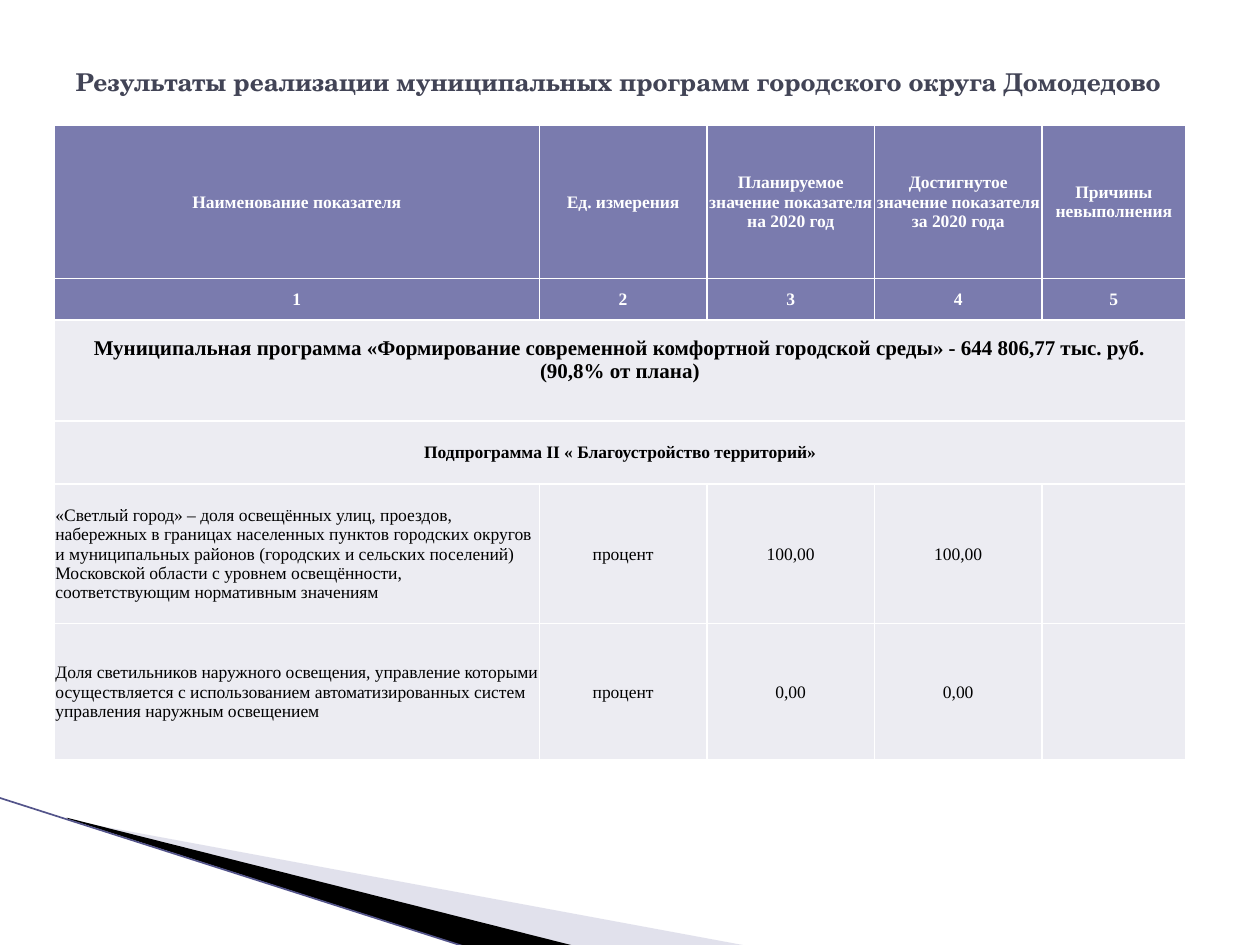
from typing import Any, NamedTuple

from lxml.etree import SubElement
from pptx import Presentation
from pptx.dml.color import RGBColor
from pptx.enum.shapes import MSO_CONNECTOR
from pptx.enum.text import MSO_ANCHOR, PP_ALIGN
from pptx.oxml import parse_xml
from pptx.oxml.ns import nsdecls, qn
from pptx.util import Pt

PX = 9144
HEADER_FILL = "7A7BAE"
BODY_FILL = "ECECF2"
CELL_FORMAT = {"margin_left": PX, "margin_right": PX, "margin_top": PX,
               "margin_bottom": 0, "vertical_anchor": MSO_ANCHOR.MIDDLE}


class Wedge(NamedTuple):
    points: list[tuple[int, int]]
    fill: str
    opacity: int = 100


class Row(NamedTuple):
    height: int
    texts: list[str]
    fill: str = BODY_FILL
    color: str = "000000"
    bold: bool = False
    size: int = 10
    first_align: PP_ALIGN = PP_ALIGN.CENTER
    bottom_margin: int = 0


WEDGES = [
    Wedge([(55, 651), (595, 751), (456, 751), (55, 650)], "B6B6D1", 40),
    Wedge([(53, 649), (457, 751), (372, 752), (54, 650)], "000000"),
]
COLUMN_WIDTHS = [385, 133, 133, 133, 114]
ROWS = [
    Row(122, ["Наименование показателя", "Ед. измерения",
              "Планируемое значение показателя на 2020 год",
              "Достигнутое значение показателя за 2020 года",
              "Причины невыполнения"], HEADER_FILL, "FFFFFF", True),
    Row(33, ["1", "2", "3", "4", "5"], HEADER_FILL, "FFFFFF", True),
    Row(80, ["Муниципальная программа «Формирование современной комфортной "
             "городской среды» - 644 806,77 тыс. руб.\v(90,8% от плана)"],
        bold=True, size=12, bottom_margin=18),
    Row(50, ["Подпрограмма II « Благоустройство территорий»"], bold=True),
    Row(111, ["«Светлый город» – доля освещённых улиц, проездов, набережных в границах "
              "населенных пунктов городских округов и муниципальных районов (городских и "
              "сельских поселений) Московской области с уровнем освещённости, "
              "соответствующим нормативным значениям",
              "процент", "100,00", "100,00", ""], first_align=PP_ALIGN.LEFT),
    Row(108, ["Доля светильников наружного освещения, управление которыми "
              "осуществляется с использованием автоматизированных систем управления "
              "наружным освещением",
              "процент", "0,00", "0,00", ""], first_align=PP_ALIGN.LEFT),
]


def rgb(value: str) -> RGBColor:
    return RGBColor.from_string(value)


def apply_format(target: Any, values: dict[str, Any]) -> None:
    for name, value in values.items():
        setattr(target, name, value)


def format_font(font: Any, name: str, size: int, color: str, bold: bool) -> None:
    apply_format(font, {"name": name, "size": Pt(size), "bold": bold})
    font.color.rgb = rgb(color)


def draw_wedge(slide: Any, wedge: Wedge) -> None:
    builder = slide.shapes.build_freeform(*wedge.points[0], scale=PX)
    builder.add_line_segments(wedge.points[1:], close=True)
    shape = builder.convert_to_shape()
    shape.shadow.inherit = False
    shape.line.fill.background()
    shape.fill.solid()
    shape.fill.fore_color.rgb = rgb(wedge.fill)
    if wedge.opacity < 100:
        color = shape.fill._xPr.find(qn("a:solidFill"))[0]
        SubElement(color, qn("a:alpha"), val=str(wedge.opacity * 1000))


def draw_edge(slide: Any) -> None:
    edge = slide.shapes.add_connector(
        MSO_CONNECTOR.STRAIGHT, -PX, 633 * PX, 371 * PX, 752 * PX)
    edge.line.color.rgb = rgb("53548A")
    edge.line.width = Pt(0.95)
    SubElement(edge._element.spPr, qn("a:effectLst"))


def set_borders(cell: Any) -> None:
    properties = cell._tc.get_or_add_tcPr()
    for side in ("lnL", "lnR", "lnT", "lnB"):
        properties.append(parse_xml(
            f'<a:{side} {nsdecls("a")} w="12700"><a:solidFill>'
            f'<a:srgbClr val="FFFFFF"/></a:solidFill></a:{side}>'))


def fill_row(table: Any, index: int, row: Row) -> None:
    table.rows[index].height = row.height * PX
    cells = list(table.rows[index].cells)
    for cell in cells:
        set_borders(cell)
        apply_format(cell, CELL_FORMAT | {"margin_bottom": row.bottom_margin * PX})
        cell.fill.solid()
        cell.fill.fore_color.rgb = rgb(row.fill)
    if len(row.texts) == 1:
        cells[0].merge(cells[-1])
    for column, (cell, text) in enumerate(zip(cells, row.texts)):
        cell.text = text
        paragraph = cell.text_frame.paragraphs[0]
        paragraph.alignment = PP_ALIGN.CENTER if column else row.first_align
        format_font(paragraph.font, "Times New Roman", row.size, row.color, row.bold)
        for run in paragraph.runs:
            format_font(run.font, "Times New Roman", row.size, row.color, row.bold)


def draw_results(slide: Any) -> None:
    table = slide.shapes.add_table(
        len(ROWS), len(COLUMN_WIDTHS), 43 * PX, 99 * PX,
        sum(COLUMN_WIDTHS) * PX, sum(row.height for row in ROWS) * PX).table
    for column, width in zip(table.columns, COLUMN_WIDTHS):
        column.width = width * PX
    for index, row in enumerate(ROWS):
        fill_row(table, index, row)


def draw_title(slide: Any) -> None:
    title = slide.shapes.title
    apply_format(title, {"left": 50 * PX, "top": 30 * PX,
                         "width": 900 * PX, "height": 69 * PX})
    title.text_frame.text = "Результаты реализации муниципальных программ городского округа Домодедово"
    title.text_frame.vertical_anchor = MSO_ANCHOR.MIDDLE
    heading = title.text_frame.paragraphs[0]
    heading.alignment = PP_ALIGN.LEFT
    format_font(heading.runs[0].font, "TeX Gyre Schola", 14, "424456", True)


def main() -> None:
    presentation = Presentation()
    apply_format(presentation, {"slide_width": 1000 * PX, "slide_height": 750 * PX})
    slide = presentation.slides.add_slide(presentation.slide_layouts[5])
    for wedge in WEDGES:
        draw_wedge(slide, wedge)
    draw_edge(slide)
    draw_title(slide)
    draw_results(slide)
    presentation.save("out.pptx")


if __name__ == "__main__":
    main()
